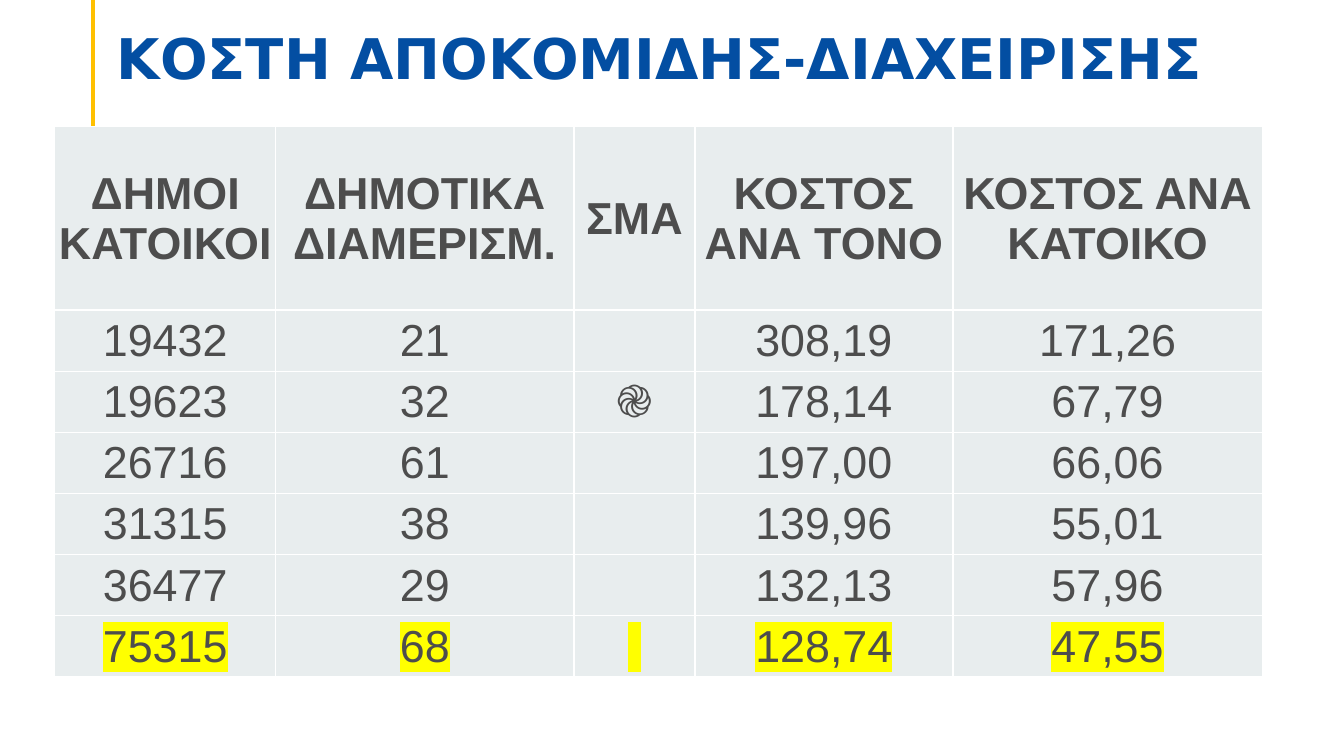
from lxml import etree
from pptx import Presentation
from pptx.dml.color import RGBColor
from pptx.enum import shapes, text
from pptx.oxml import ns
from pptx.util import Pt

BLUE, GOLD, GREY = "034EA2", "FFC000", "4D4D4D"
CELL_FILL, WHITE, YELLOW = "E8EDEE", "FFFFFF", "FFFF00"

COLUMN_WIDTHS = [157.7, 213.1, 86.4, 184.3, 221]
HEADER_HEIGHT, ROW_HEIGHT = 131, 43.7
ROWS = [
    ["ΔΗΜΟΙ\nΚΑΤΟΙΚΟΙ", "ΔΗΜΟΤΙΚΑ ΔΙΑΜΕΡΙΣΜ.", "ΣΜΑ", "ΚΟΣΤΟΣ ΑΝΑ ΤΟΝΟ", "ΚΟΣΤΟΣ ΑΝΑ ΚΑΤΟΙΚΟ"],
    ["19432", "21", "", "308,19", "171,26"],
    ["19623", "32", "֎", "178,14", "67,79"],
    ["26716", "61", "", "197,00", "66,06"],
    ["31315", "38", "", "139,96", "55,01"],
    ["36477", "29", "", "132,13", "57,96"],
    ["75315", "68", " ", "128,74", "47,55"],
]


def rgb(value):
    return RGBColor.from_string(value)


def add_color(parent, tag, color):
    element = etree.SubElement(parent, ns.qn(tag))
    etree.SubElement(element, ns.qn("a:srgbClr"), val=color)
    return element


def write_text(frame, content, *, font, size, color, bold=False, align=None,
               spacing=None, highlight=None):
    for index, line in enumerate(content.split("\n")):
        paragraph = frame.add_paragraph() if index else frame.paragraphs[0]
        paragraph.alignment = align
        paragraph.line_spacing = spacing
        if not line:
            continue
        run = paragraph.add_run()
        run.text = line
        run.font.name, run.font.size, run.font.bold = font, Pt(size), bold
        run.font.color.rgb = rgb(color)
        if highlight:
            properties = run.font._element
            mark = add_color(properties, "a:highlight", highlight)
            properties.find(ns.qn("a:solidFill")).addnext(mark)


def add_rule(slide, x, top, bottom, color, width):
    line = slide.shapes.add_connector(
        shapes.MSO_CONNECTOR.STRAIGHT, Pt(x), Pt(top), Pt(x), Pt(bottom))
    line.line.color.rgb = rgb(color)
    line.line.width = Pt(width)
    etree.SubElement(line._element.spPr, ns.qn("a:effectLst"))


def format_title(title, content):
    title.left, title.top, title.width, title.height = Pt(76.3), Pt(38.2), Pt(862), Pt(27.4)
    frame = title.text_frame
    frame.word_wrap = True
    frame.auto_size = text.MSO_AUTO_SIZE.NONE
    frame.vertical_anchor = text.MSO_ANCHOR.BOTTOM
    frame.margin_left = frame.margin_right = Pt(7.2)
    frame.margin_top, frame.margin_bottom = Pt(3.6), 0
    write_text(frame, content, font="DejaVu Sans", size=40, color=BLUE, bold=True,
               align=text.PP_ALIGN.LEFT, spacing=0.9)


def format_cell(cell):
    cell.vertical_anchor = text.MSO_ANCHOR.MIDDLE
    cell.margin_left = cell.margin_right = cell.margin_top = Pt(0.72)
    cell.margin_bottom = 0
    # Borders come before the fill in the cell properties
    properties = cell._tc.get_or_add_tcPr()
    for side in "LRTB":
        border = etree.SubElement(properties, ns.qn(f"a:ln{side}"), w=str(Pt(1)))
        add_color(border, "a:solidFill", WHITE)
    cell.fill.solid()
    cell.fill.fore_color.rgb = rgb(CELL_FILL)


def add_cost_table(slide, left, top):
    height = HEADER_HEIGHT + ROW_HEIGHT * (len(ROWS) - 1)
    table = slide.shapes.add_table(
        len(ROWS), len(COLUMN_WIDTHS), Pt(left), Pt(top),
        Pt(sum(COLUMN_WIDTHS)), Pt(height)).table
    table.horz_banding = False
    for column, width in zip(table.columns, COLUMN_WIDTHS):
        column.width = Pt(width)
    for index, values in enumerate(ROWS):
        is_header, is_last = index == 0, index == len(ROWS) - 1
        table.rows[index].height = Pt(HEADER_HEIGHT if is_header else ROW_HEIGHT)
        for cell, value in zip(table.rows[index].cells, values):
            format_cell(cell)
            write_text(cell.text_frame, value, font="Arial", size=32, color=GREY,
                       bold=is_header, align=text.PP_ALIGN.CENTER,
                       highlight=YELLOW if is_last else None)


def main():
    presentation = Presentation()
    presentation.slide_width, presentation.slide_height = Pt(960), Pt(540)
    slide = presentation.slides.add_slide(presentation.slide_layouts[5])

    # Gold rule beside the title
    add_rule(slide, 66.4, 0, 100.8, GOLD, 2.25)

    # Title
    format_title(slide.shapes.title, "ΚΟΣΤΗ ΑΠΟΚΟΜΙΔΗΣ-ΔΙΑΧΕΙΡΙΣΗΣ")

    # Costs by municipality
    add_cost_table(slide, 39.2, 90.4)

    presentation.save("out.pptx")


if __name__ == "__main__":
    main()
